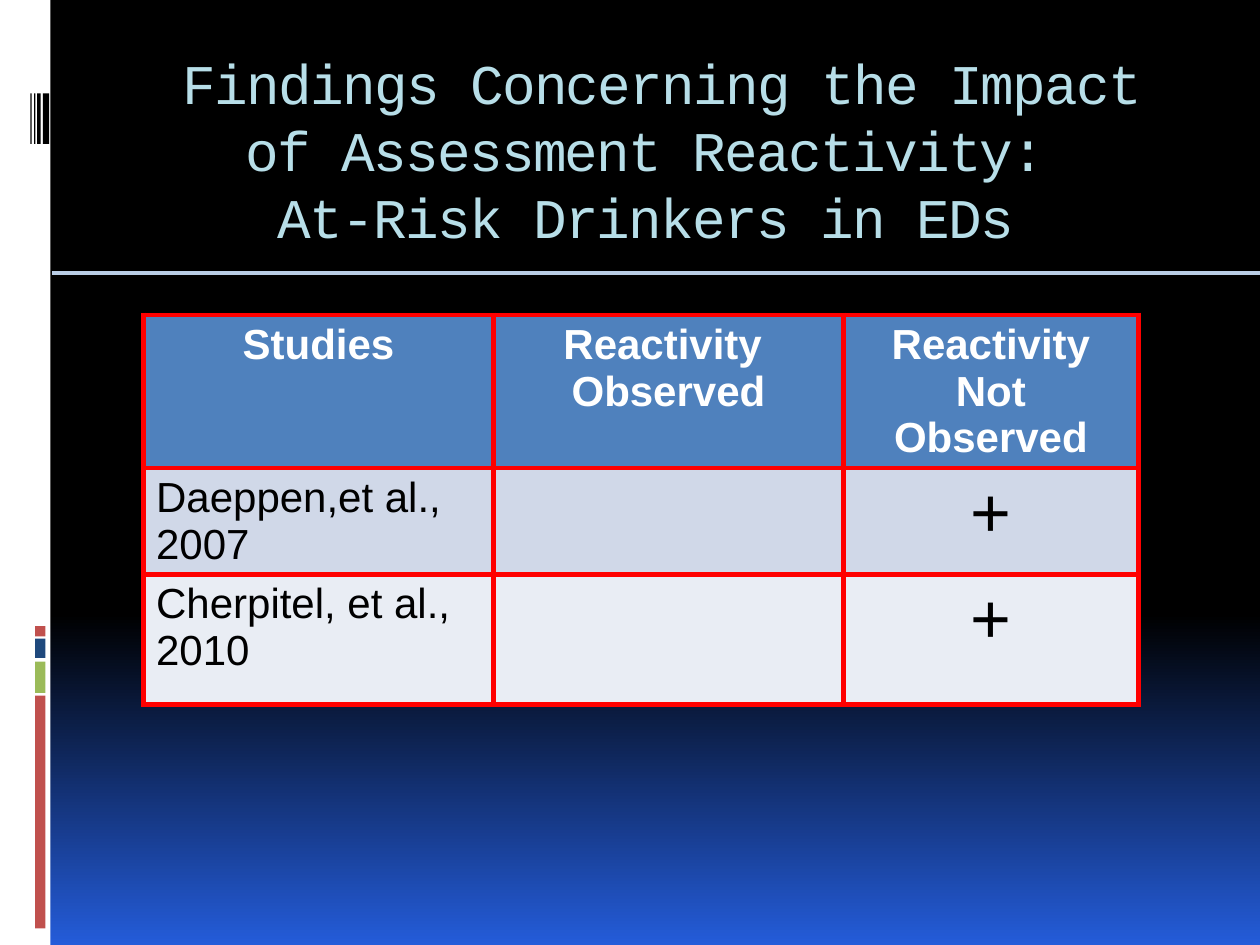
from copy import deepcopy

from pptx import Presentation
from pptx.dml.color import RGBColor
from pptx.enum.shapes import MSO_CONNECTOR, MSO_SHAPE
from pptx.enum.text import MSO_ANCHOR, MSO_AUTO_SIZE, PP_ALIGN
from pptx.oxml.ns import qn
from pptx.util import Pt
from lxml import etree

RECT = MSO_SHAPE.RECTANGLE
STRAIGHT = MSO_CONNECTOR.STRAIGHT
TOP = MSO_ANCHOR.TOP
NO_FIT = MSO_AUTO_SIZE.NONE
LEFT, CENTER = PP_ALIGN.LEFT, PP_ALIGN.CENTER

WHITE = RGBColor(0xFF, 0xFF, 0xFF)
BLACK = RGBColor(0x00, 0x00, 0x00)
RED = RGBColor(0xC0, 0x50, 0x4D)
GREEN = RGBColor(0x9B, 0xBB, 0x59)
NAVY = RGBColor(0x1F, 0x49, 0x7D)
GLOW = RGBColor(0x24, 0x5C, 0xD9)
TITLE = RGBColor(0xB7, 0xDE, 0xE8)
RULE = RGBColor(0xB9, 0xCD, 0xE5)
HEADER = RGBColor(0x4F, 0x81, 0xBD)
BANDS = RGBColor(0xD0, 0xD8, 0xE8), RGBColor(0xE9, 0xED, 0xF4)
BORDER = RGBColor(0xFF, 0x00, 0x00)

COLUMNS = [200, 200, 168.5]
ROWS = [57.6, 57.6, 74.4]
STUDIES = [
    ["Studies", "Reactivity \nObserved", "Reactivity Not\nObserved"],
    ["Daeppen,et al., 2007", "", "+"],
    ["Cherpitel, et al., 2010", "", "+"],
]


def paint_background(s):
    """Fill the slide with black that turns blue near the bottom."""
    fill = s.background.fill
    fill.gradient()
    fill.gradient_angle = 270
    for stop, color, position in zip(fill.gradient_stops, (BLACK, GLOW), (0, 1)):
        stop.color.rgb = color
        stop.position = position
    first = next(s.element.iter(qn("a:gs")))
    middle = deepcopy(first)
    middle.set("pos", "65000")
    first.addnext(middle)


def add_bar(s, x, y, w, h, color):
    """Add a plain filled rectangle."""
    sp = s.shapes.add_shape(RECT, Pt(x), Pt(y), Pt(w), Pt(h))
    sp.shadow.inherit = False
    sp.fill.solid()
    sp.fill.fore_color.rgb = color
    sp.line.fill.background()


def add_side_strip(s, x, y, w, h):
    """Draw the white strip with its coloured blocks and black stripes."""
    add_bar(s, x, y, w, h, WHITE)
    blocks = [(397.5, 133, RED), (378, 18, GREEN), (365, 11, NAVY), (357.8, 5.8, RED)]
    for top, height, color in blocks:
        add_bar(s, x + 20.1, y + top, 5.8, height, color)
    for left, width in [(24.5, 3.6), (21.2, 2), (19.5, 0.7), (17.4, 0.7)]:
        add_bar(s, x + left, y + 53.4, width, 28.8, BLACK)


def add_title(s, x, y, w, h):
    """Place and format the title."""
    sp = s.shapes.title
    sp.left, sp.top, sp.width, sp.height = Pt(x), Pt(y), Pt(w), Pt(h)
    tf = sp.text_frame
    tf.text = ("Findings Concerning the Impact of Assessment Reactivity: \v"
               "At-Risk Drinkers in EDs ")
    tf.word_wrap = True
    tf.auto_size = NO_FIT
    tf.vertical_anchor = TOP
    p = tf.paragraphs[0]
    p.alignment = CENTER
    for r in p.runs:
        r.font.name = "Courier New"
        r.font.size = Pt(32)
        r.font.color.rgb = TITLE
        r.font._element.set("spc", "-100")


def add_borders(cell):
    """Give a cell a red line on each side, ahead of its fill."""
    pr = cell._tc.get_or_add_tcPr()
    for i, side in enumerate(("lnL", "lnR", "lnT", "lnB")):
        ln = etree.Element(qn(f"a:{side}"), w=str(Pt(3)))
        fill = etree.SubElement(ln, qn("a:solidFill"))
        etree.SubElement(fill, qn("a:srgbClr"), val=str(BORDER))
        pr.insert(i, ln)


def fill_cell(cell, text, row, col):
    """Write and format one table cell."""
    is_header = row == 0
    cell.fill.solid()
    cell.fill.fore_color.rgb = HEADER if is_header else BANDS[(row - 1) % 2]
    add_borders(cell)
    cell.text_frame.text = text
    for p in cell.text_frame.paragraphs:
        p.alignment = CENTER if is_header or col else LEFT
        for r in p.runs:
            r.font.name = "Arial"
            r.font.size = Pt(40 if text == "+" else 24)
            r.font.bold = is_header
            r.font.color.rgb = WHITE if is_header else BLACK


def add_studies_table(s, x, y, w, h):
    """Add the table of studies."""
    frame = s.shapes.add_table(len(ROWS), len(COLUMNS), Pt(x), Pt(y), Pt(w), Pt(h))
    table = frame.table
    for column, width in zip(table.columns, COLUMNS):
        column.width = Pt(width)
    for i, (height, texts) in enumerate(zip(ROWS, STUDIES)):
        table.rows[i].height = Pt(height)
        for j, text in enumerate(texts):
            fill_cell(table.cell(i, j), text, i, j)


def add_rule(s, x, y, w):
    """Draw the line below the title."""
    line = s.shapes.add_connector(STRAIGHT, Pt(x), Pt(y), Pt(x + w), Pt(y))
    line.line.color.rgb = RULE
    line.line.width = Pt(2.25)
    etree.SubElement(line._element.spPr, qn("a:effectLst"))


def main():
    """Build and save the slide."""
    prs = Presentation()
    prs.slide_width, prs.slide_height = Pt(720), Pt(540)
    s = prs.slides.add_slide(prs.slide_layouts[5])
    paint_background(s)
    add_side_strip(s, 0, 0, 28.8, 540)
    add_title(s, 72, 24, 612, 72)
    add_studies_table(s, 82, 180, sum(COLUMNS), sum(ROWS))
    add_rule(s, 30, 156, 690)
    prs.save("out.pptx")


if __name__ == "__main__":
    main()
